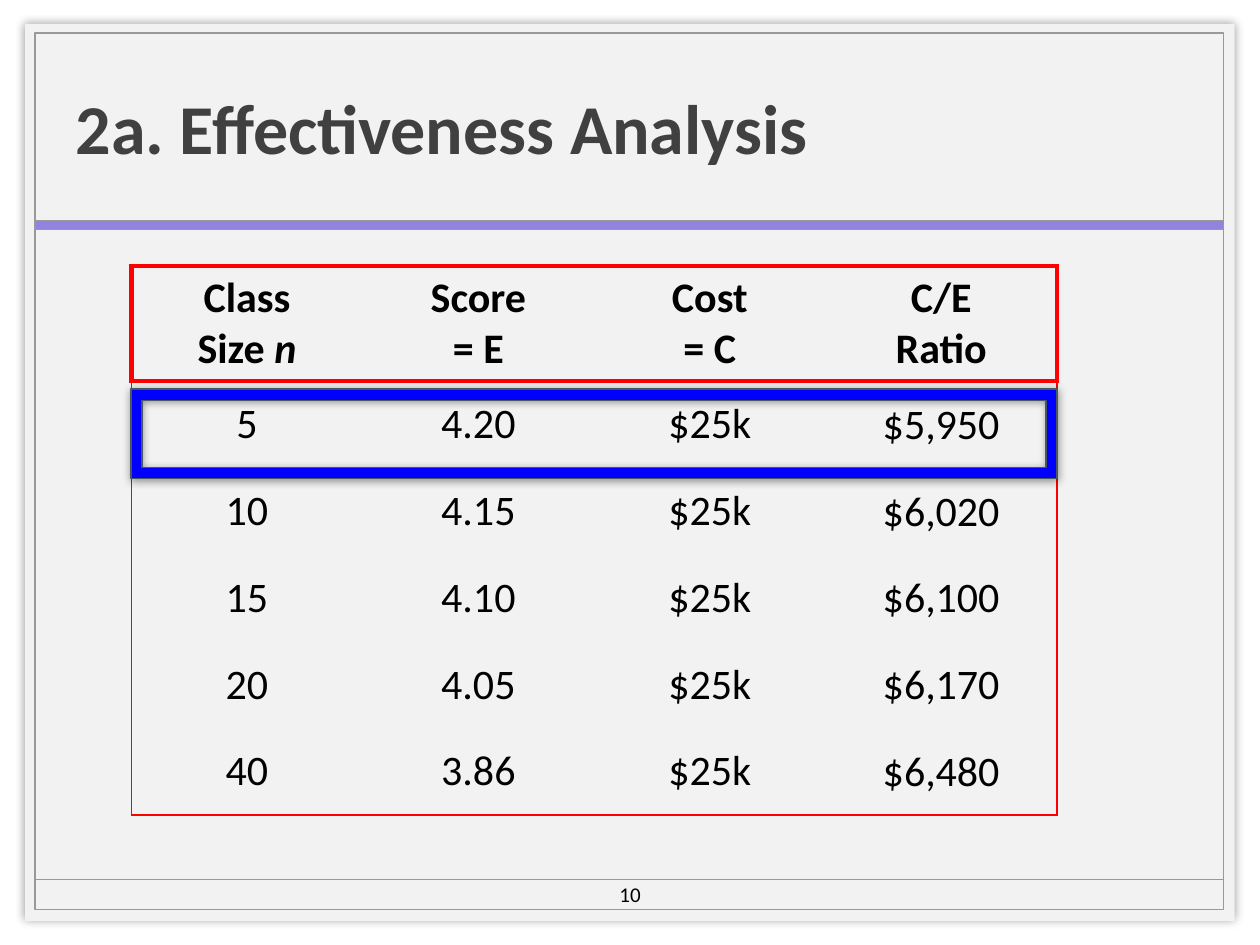
from pptx import Presentation
from pptx.dml.color import RGBColor
from pptx.enum.shapes import MSO_CONNECTOR, MSO_SHAPE
from pptx.enum.text import MSO_ANCHOR, PP_ALIGN
from pptx.oxml import parse_xml
from pptx.oxml.ns import nsdecls
from pptx.util import Pt

TITLE = "2a. Effectiveness Analysis"
PAGE = "10"
HEADS = [("Class", "Size n"), ("Score", "= E"), ("Cost", "= C"), ("C/E", "Ratio")]
ROWS = [
    ("5", "4.20", "$25k", "$5,950"),
    ("10", "4.15", "$25k", "$6,020"),
    ("15", "4.10", "$25k", "$6,100"),
    ("20", "4.05", "$25k", "$6,170"),
    ("40", "3.86", "$25k", "$6,480"),
]
RED, GRAY = "FF0000", "999999"
LEFT, TOP, WIDTH = 75, 152, 529
HEAD, ROW = 65, 49.6


def color(code):
    return RGBColor.from_string(code)


def style(para, size, code="000000", bold=False, align=PP_ALIGN.CENTER):
    font = para.font
    font.name, font.size, font.bold = "Calibri", Pt(size), bold
    font.color.rgb = color(code)
    para.alignment = align


def add_box(slide, kind, area, fill=None, line=None, width=1, glow=False):
    box = slide.shapes.add_shape(kind, *map(Pt, area))
    box.shadow.inherit = False
    if fill:
        box.fill.solid()
        box.fill.fore_color.rgb = color(fill)
    else:
        box.fill.background()
    if line:
        box.line.color.rgb = color(line)
        box.line.width = Pt(width)
    else:
        box.line.fill.background()
    if glow:
        props = box._element.spPr
        props.remove(props.find("{*}effectLst"))
        props.append(parse_xml(
            f'<a:effectLst {nsdecls("a")}><a:outerShdw blurRad="{Pt(5)}" dist="0" dir="0">'
            '<a:srgbClr val="000000"><a:alpha val="40000"/></a:srgbClr>'
            '</a:outerShdw></a:effectLst>'))


def add_edges(cell, edges):
    props = cell._tc.get_or_add_tcPr()
    for side in "LRTB":
        width = edges.get(side, 0)
        paint = (f'<a:solidFill><a:srgbClr val="{RED}"/></a:solidFill>'
                 if width else "<a:noFill/>")
        props.append(parse_xml(
            f'<a:ln{side} {nsdecls("a")} w="{Pt(width)}">{paint}</a:ln{side}>'))


def find_edges(row, col):
    edges = {}
    side = 3 if row == 0 else 1
    if col == 0:
        edges["L"] = side
    if col == len(HEADS) - 1:
        edges["R"] = side
    if row < 2:
        edges["T"] = 3
    if row == 2:
        edges["T"] = 1
    if row == 0:
        edges["B"] = 3
    if row in (1, len(ROWS)):
        edges["B"] = 1
    return edges


def fill_head(cell, lines):
    frame = cell.text_frame
    frame.text = "\n".join(lines)
    for para in frame.paragraphs:
        style(para, 24, bold=True)
    if lines[1].endswith(" n"):
        para = frame.paragraphs[1]
        para.runs[0].text = lines[1][:-1]
        run = para.add_run()
        run.text = "n"
        run.font.italic = True


def add_grid(slide):
    count = len(HEADS)
    grid = slide.shapes.add_table(
        len(ROWS) + 1, count, Pt(LEFT), Pt(TOP), Pt(WIDTH),
        Pt(HEAD + ROW * len(ROWS))).table
    grid.first_row = grid.horz_banding = False
    for r, items in enumerate([HEADS, *ROWS]):
        grid.rows[r].height = Pt(ROW if r else HEAD)
        for c, item in enumerate(items):
            cell = grid.cell(r, c)
            tight = r > 0 and c == count - 1
            cell.margin_left = cell.margin_right = Pt(0.7 if tight else 4.3)
            cell.margin_top = Pt(0.7 if tight else 3.6)
            cell.margin_bottom = Pt(0 if tight else 3.6)
            if r:
                cell.text = item
                cell.vertical_anchor = MSO_ANCHOR.MIDDLE
                style(cell.text_frame.paragraphs[0], 24)
            else:
                fill_head(cell, item)
            add_edges(cell, find_edges(r, c))
            cell.fill.background()


def main():
    deck = Presentation()
    deck.slide_width, deck.slide_height = Pt(720), Pt(540)
    slide = deck.slides.add_slide(deck.slide_layouts[5])
    rect = MSO_SHAPE.RECTANGLE
    add_box(slide, rect, (14.4, 13.7, 691.2, 512.6), "F2F2F2", glow=True)
    add_box(slide, rect, (20.2, 18.7, 679, 501.1), line=GRAY)
    rule = slide.shapes.add_connector(
        MSO_CONNECTOR.STRAIGHT, Pt(20.2), Pt(502.6), Pt(699.2), Pt(502.6))
    rule.line.color.rgb = color(GRAY)
    rule.line.width = Pt(1)
    rule._element.spPr.append(parse_xml(f'<a:effectLst {nsdecls("a")}/>'))
    add_box(slide, rect, (20.2, 126, 679, 5), "9482E0", GRAY, 0.25)

    title = slide.shapes.title
    slide.shapes._spTree.append(title._element)
    title.left, title.top, title.width, title.height = map(Pt, (36, 19.4, 613.4, 105.8))
    title.text = TITLE
    title.text_frame.vertical_anchor = MSO_ANCHOR.MIDDLE
    style(title.text_frame.paragraphs[0], 40, "404040", True, PP_ALIGN.LEFT)

    add_grid(slide)
    note = slide.shapes.add_textbox(*map(Pt, (330, 500.4, 60, 21.6))).text_frame
    note.word_wrap = True
    note.vertical_anchor = MSO_ANCHOR.MIDDLE
    note.text = PAGE
    style(note.paragraphs[0], 12)
    add_box(slide, MSO_SHAPE.FRAME, (LEFT, 222.5, WIDTH, 51), "0000FF", "49585E", glow=True)
    deck.save("out.pptx")


if __name__ == "__main__":
    main()
